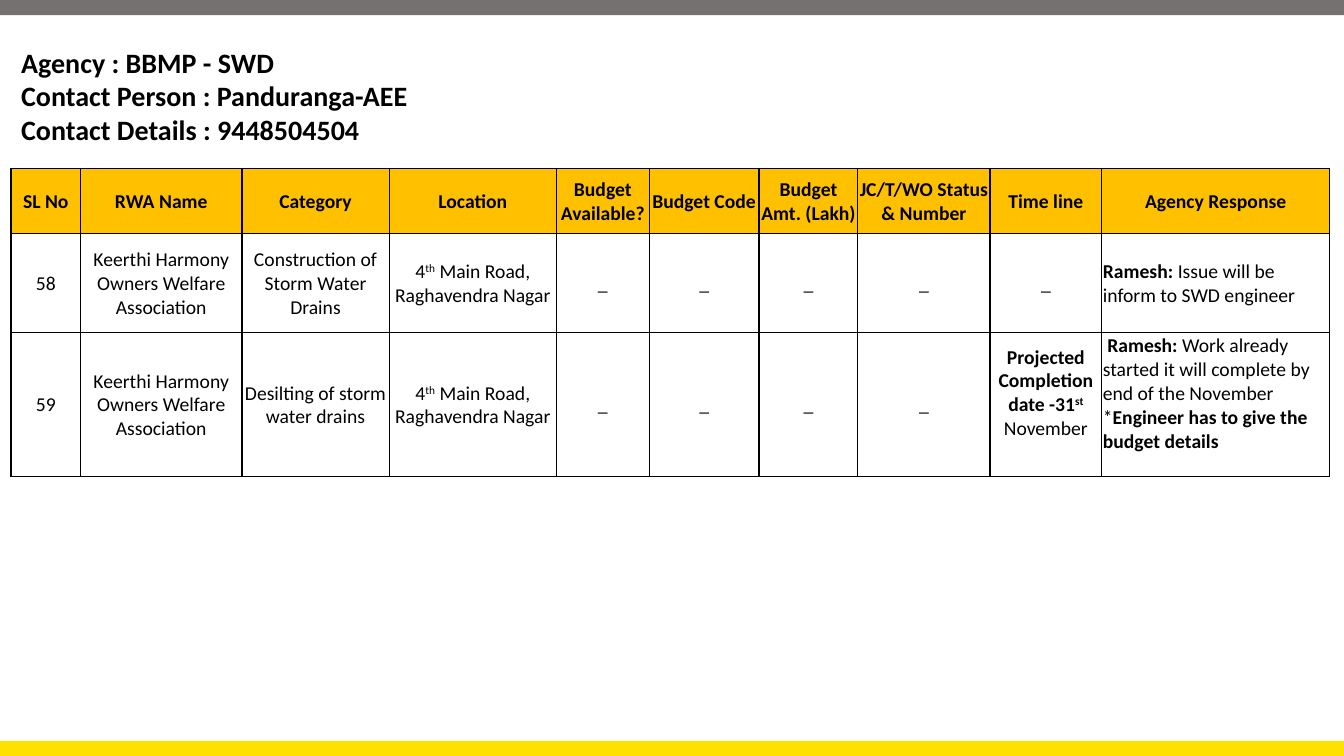
"""Build the storm water drain agency response slide."""
from dataclasses import dataclass
from typing import NamedTuple

from lxml import etree
from pptx import Presentation
from pptx.dml.color import RGBColor
from pptx.enum.shapes import MSO_SHAPE
from pptx.enum.text import MSO_ANCHOR, MSO_AUTO_SIZE, PP_ALIGN
from pptx.oxml.ns import qn
from pptx.util import Inches, Pt

RECT = MSO_SHAPE.RECTANGLE
TOP, MIDDLE = MSO_ANCHOR.TOP, MSO_ANCHOR.MIDDLE
NO_FIT = MSO_AUTO_SIZE.NONE
LEFT, CENTER = PP_ALIGN.LEFT, PP_ALIGN.CENTER

FONT = "Calibri"
COLORS = {"text": "000000", "border": "000000", "header": "FFC000",
          "top": "767171", "bottom": "FFE000"}
BAR_HEIGHT = 0.15
COL_WIDTHS = [0.69, 1.6, 1.46, 1.66, 0.92, 1.09, 0.98, 1.31, 1.11, 2.26]
ROW_HEIGHTS = [0.65, 0.98, 1.43]


class Run(NamedTuple):
    text: str
    bold: bool = False
    sup: bool = False


@dataclass
class Cell:
    paragraphs: list[list[Run]]
    align: PP_ALIGN = CENTER
    bottom: float = 0


def plain(text: str) -> Cell:
    """Return a centred cell holding one regular run."""
    return Cell([[Run(text)]])


def write(tf, paragraphs: list[list[Run]], size: int, align: PP_ALIGN) -> None:
    """Fill a text frame run by run."""
    for i, runs in enumerate(paragraphs):
        p = tf.paragraphs[0] if i == 0 else tf.add_paragraph()
        p.alignment = align
        p.space_before = Pt(0)
        for run in runs:
            r = p.add_run()
            r.text = run.text
            r.font.name = FONT
            r.font.size = Pt(size)
            r.font.bold = run.bold
            r.font.color.rgb = RGBColor.from_string(COLORS["text"])
            if run.sup:
                r._r.get_or_add_rPr().set("baseline", "30000")


def add_bar(s, top: float, color: str) -> None:
    """Draw a full-width band."""
    sp = s.shapes.add_shape(RECT, 0, Inches(top), Inches(13.33), Inches(BAR_HEIGHT))
    sp.shadow.inherit = False
    sp.fill.solid()
    sp.fill.fore_color.rgb = RGBColor.from_string(color)
    sp.line.fill.background()


def add_borders(cell) -> None:
    """Outline a table cell on all sides."""
    tc_pr = cell._tc.get_or_add_tcPr()
    for side in ("a:lnL", "a:lnR", "a:lnT", "a:lnB"):
        ln = etree.SubElement(tc_pr, qn(side), w=str(Pt(1)))
        fill = etree.SubElement(ln, qn("a:solidFill"))
        etree.SubElement(fill, qn("a:srgbClr"), val=COLORS["border"])


def add_response_table(s, rows: list[list[Cell]]) -> None:
    """Draw the table with its first row as the header."""
    table = s.shapes.add_table(len(rows), len(COL_WIDTHS), Inches(0.11), Inches(1.67),
                               Inches(sum(COL_WIDTHS)), Inches(sum(ROW_HEIGHTS))).table
    table.first_row = table.horz_banding = False
    for column, width in zip(table.columns, COL_WIDTHS):
        column.width = Inches(width)
    for i, (row, height) in enumerate(zip(rows, ROW_HEIGHTS)):
        table.rows[i].height = Inches(height)
        for j, item in enumerate(row):
            cell = table.cell(i, j)
            cell.margin_left = cell.margin_right = cell.margin_top = Inches(0.01)
            cell.margin_bottom = Inches(item.bottom)
            cell.vertical_anchor = MIDDLE
            add_borders(cell)
            if i == 0:
                cell.fill.solid()
                cell.fill.fore_color.rgb = RGBColor.from_string(COLORS["header"])
            else:
                cell.fill.background()
            write(cell.text_frame, item.paragraphs, 14, item.align)


def add_heading(s, lines: list[str]) -> None:
    """Place the agency contact lines in the title."""
    sp = s.shapes.title
    sp.left, sp.top = Inches(0.11), Inches(0.4)
    sp.width, sp.height = Inches(12.95), Inches(1.11)
    tf = sp.text_frame
    tf.word_wrap = True
    tf.auto_size = NO_FIT
    tf.vertical_anchor = TOP
    write(tf, [[Run(line, True)] for line in lines], 20, LEFT)


HEADERS = ["SL No", "RWA Name", "Category", "Location", "Budget Available?",
           "Budget Code", "Budget Amt. (Lakh)", "JC/T/WO Status & Number",
           "Time line", "Agency Response"]
RWA = plain("Keerthi Harmony Owners Welfare Association")
LOCATION = Cell([[Run("4"), Run("th", sup=True), Run(" Main Road, Raghavendra Nagar")]])
BLANK = plain("_")
NAME = Run("Ramesh: ", True)
ROWS = [
    [Cell([[Run(text, True)]]) for text in HEADERS],
    [plain("58"), RWA, plain("Construction of Storm Water Drains"), LOCATION,
     *[BLANK] * 5,
     Cell([[NAME, Run("Issue will be inform to SWD engineer")]], LEFT)],
    [plain("59"), RWA, plain("Desilting of storm water drains"), LOCATION,
     *[BLANK] * 4,
     Cell([[Run("Projected Completion date -31", True), Run("st", True, True)],
           [Run("November")]], bottom=0.24),
     Cell([[Run(" "), NAME,
            Run("Work already started it will complete by end of the November")],
           [Run("*"), Run("Engineer has to give the budget details", True)]],
          LEFT, 0.23)],
]


def main() -> None:
    """Build and save the slide."""
    prs = Presentation()
    prs.slide_width, prs.slide_height = Inches(13.33), Inches(7.5)
    s = prs.slides.add_slide(prs.slide_layouts[5])
    add_bar(s, 7.5 - BAR_HEIGHT, COLORS["bottom"])
    add_bar(s, 0, COLORS["top"])
    add_response_table(s, ROWS)
    add_heading(s, ["Agency : BBMP - SWD", "Contact Person : Panduranga-AEE",
                    "Contact Details : 9448504504"])
    prs.save("out.pptx")


if __name__ == "__main__":
    main()
